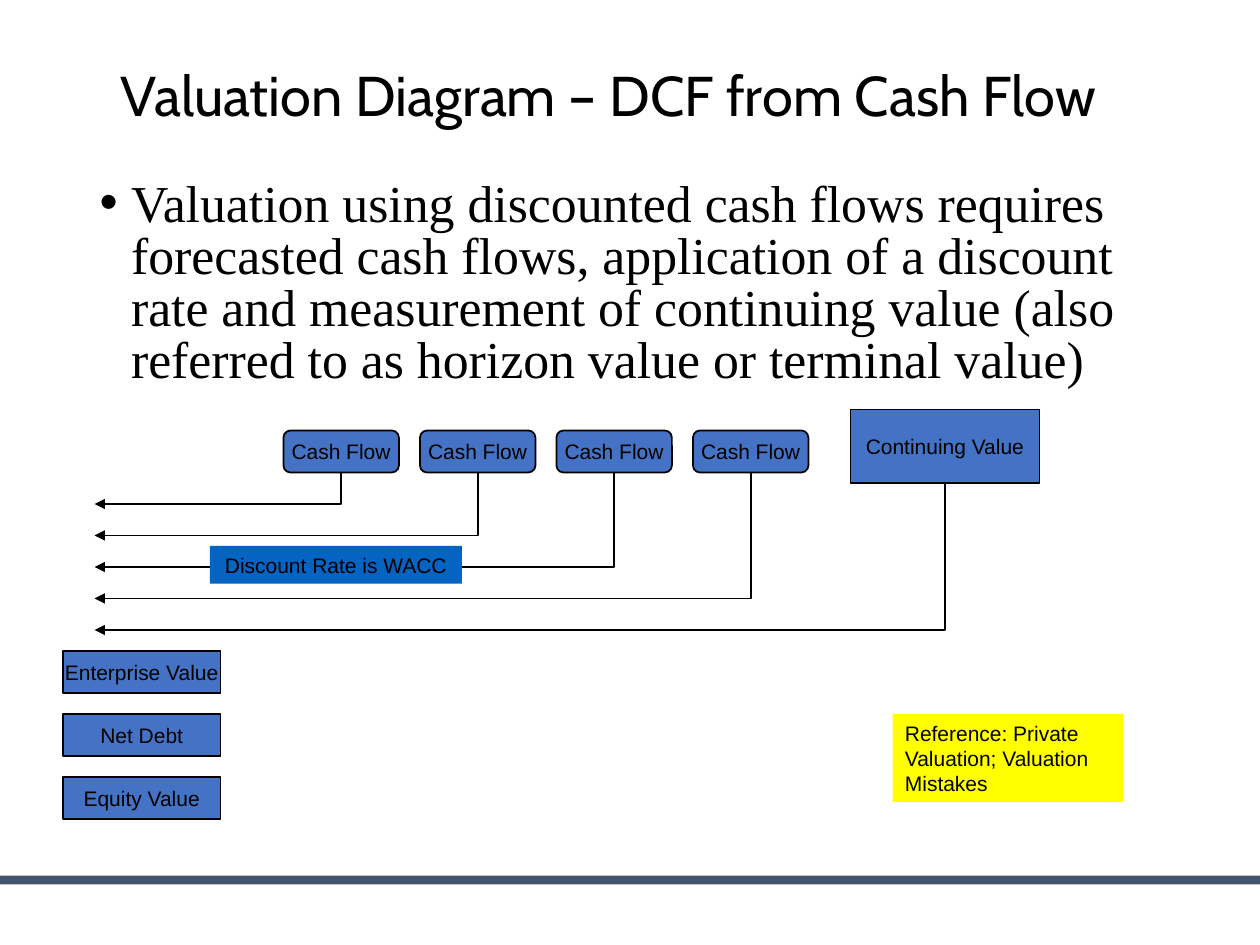
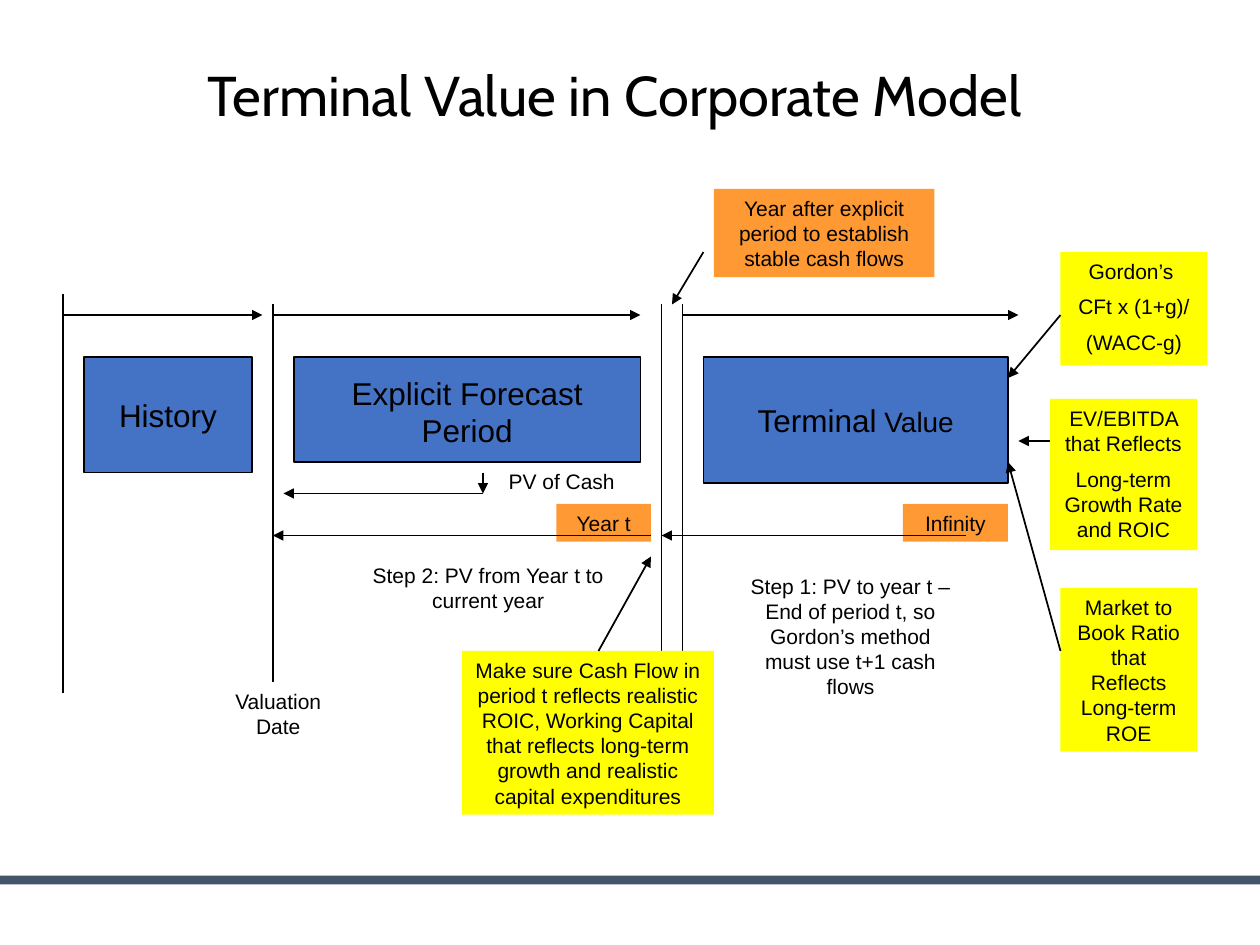
import lxml.etree
import pptx
import pptx.dml.color
import pptx.enum.shapes
import pptx.enum.text
import pptx.oxml
import pptx.oxml.ns
import pptx.util

SHAPE = pptx.enum.shapes.MSO_SHAPE
CONNECTOR = pptx.enum.shapes.MSO_CONNECTOR
ALIGN = pptx.enum.text.PP_ALIGN
ANCHOR = pptx.enum.text.MSO_ANCHOR

BLACK = "000000"
BLUE = "4472C4"
DEEP_BLUE = "0563C1"
SLATE = "44546A"
YELLOW = "FFFF00"
ORANGE = "FF9933"


def color(value):
    """Turn a hex string into a colour."""
    return pptx.dml.color.RGBColor.from_string(value)


def grid(n):
    """Convert grid steps, twelve to the inch, into a length."""
    return pptx.util.Cm(n * 2.54 / 12)


class Deck:
    """Hold the style and the current slide, and draw each kind of element."""

    body_font = "Arial"
    title_font = "Cabin"
    bullet_font = "Times New Roman"

    def __init__(self):
        """Start an empty presentation."""
        self.prs = pptx.Presentation()
        self.prs.slide_width = grid(120)
        self.prs.slide_height = grid(90)

    def new_slide(self, title):
        """Add a slide with the footer band and a title."""
        self.s = self.prs.slides.add_slide(self.prs.slide_layouts[6])
        self.box(0, 83.4, 120, 0.84, SLATE)
        sp = self.text(8.3, 4.8, 100.5, 9.1, title, 32, self.title_font)
        sp.text_frame.vertical_anchor = ANCHOR.MIDDLE
        sp.text_frame.paragraphs[0].line_spacing = 0.9

    def style_run(self, r, size, font=body_font):
        """Set the font of a run."""
        r.font.name = font
        r.font.size = pptx.util.Pt(size)
        r.font.color.rgb = color(BLACK)

    def set_text(self, sp, text, size, font=body_font, align=ALIGN.CENTER):
        """Fill a shape with text, one paragraph per line."""
        tf = sp.text_frame
        tf.word_wrap = True
        tf.vertical_anchor = ANCHOR.TOP
        tf.text = text
        for i, p in enumerate(tf.paragraphs):
            p.alignment = align
            if i:
                p.space_before = pptx.util.Pt(size / 2)
            for r in p.runs:
                self.style_run(r, size, font)

    def text(self, x, y, w, h, text, size=12, font=body_font, align=ALIGN.CENTER):
        """Add a plain text box."""
        sp = self.s.shapes.add_textbox(*map(grid, (x, y, w, h)))
        self.set_text(sp, text, size, font, align)
        return sp

    def box(self, x, y, w, h, fill, kind=SHAPE.RECTANGLE):
        """Add a filled shape without outline."""
        sp = self.s.shapes.add_shape(kind, *map(grid, (x, y, w, h)))
        sp.shadow.inherit = False
        sp.fill.solid()
        sp.fill.fore_color.rgb = color(fill)
        sp.line.fill.background()
        return sp

    def note(self, x, y, w, h, text, fill, align=ALIGN.CENTER):
        """Add a filled note with wrapped text."""
        self.set_text(self.box(x, y, w, h, fill), text, 12, align=align)

    def block(self, x, y, w, h, text="", size=12, kind=SHAPE.RECTANGLE):
        """Add an outlined blue block with a centred label."""
        sp = self.box(x, y, w, h, BLUE, kind)
        sp.line.color.rgb = color(BLACK)
        sp.line.width = pptx.util.Pt(1)
        if text:
            self.set_text(sp, text, size)
            sp.text_frame.word_wrap = False
            sp.text_frame.vertical_anchor = ANCHOR.MIDDLE
        return sp

    def line(self, x1, y1, x2, y2, arrow=True, kind=CONNECTOR.STRAIGHT):
        """Add a line, with an arrowhead at its end if wanted."""
        sp = self.s.shapes.add_connector(kind, *map(grid, (x1, y1, x2, y2)))
        sp.line.color.rgb = color(BLACK)
        sp.line.width = pptx.util.Pt(1)
        qn = pptx.oxml.ns.qn
        spPr = sp._element.spPr
        if arrow:
            lxml.etree.SubElement(spPr.find(qn("a:ln")), qn("a:tailEnd"), type="triangle")
        lxml.etree.SubElement(spPr, qn("a:effectLst"))
        return sp

    def down_left_arrow(self, x1, y1, x2, y2):
        """Add an arrow that runs down and then left."""
        cx, cy = (x1 + x2) / 2, (y1 + y2) / 2
        dx, dy = (x1 - x2) / 2, (y2 - y1) / 2
        sp = self.line(cx - dy, cy - dx, cx + dy, cy + dx, kind=CONNECTOR.ELBOW)
        spPr = sp._element.spPr
        spPr.find(pptx.oxml.ns.qn("a:xfrm")).set("rot", "5400000")
        spPr.find(pptx.oxml.ns.qn("a:prstGeom")).set("prst", "bentConnector2")

    def bullet(self, x, y, w, h, text, size):
        """Add a bulleted paragraph."""
        sp = self.text(x, y, w, h, text, size, self.bullet_font, ALIGN.LEFT)
        p = sp.text_frame.paragraphs[0]
        p.line_spacing = 0.84
        pPr = p._p.get_or_add_pPr()
        pPr.set("marL", str(grid(3)))
        pPr.set("indent", str(-grid(3)))
        qn = pptx.oxml.ns.qn
        lxml.etree.SubElement(pPr, qn("a:buFont"), typeface=self.body_font)
        lxml.etree.SubElement(pPr, qn("a:buChar"), char="•")


def valuation_diagram(deck):
    """Draw the discounted cash flow diagram."""
    deck.new_slide("Valuation Diagram – DCF from Cash Flow ")
    deck.bullet(
        8.3, 16.6, 102.1, 20.4,
        "Valuation using discounted cash flows requires forecasted cash flows, "
        "application of a discount rate and measurement of continuing value "
        "(also referred to as horizon value or terminal value)", 29.6)
    for i in range(4):
        x = 27 + 13 * i
        deck.block(x, 41, 11, 4, "Cash Flow", kind=SHAPE.ROUNDED_RECTANGLE)
        deck.down_left_arrow(x + 5.5, 45, 9, 48 + 3 * i)
    deck.block(81, 39, 18, 7, "Continuing Value")
    deck.down_left_arrow(90, 46, 9, 60)
    deck.note(20, 52, 24, 3.6, "Discount Rate is WACC", DEEP_BLUE)
    for i, label in enumerate(("Enterprise Value", "Net Debt", "Equity Value")):
        deck.block(6, 62 + 6 * i, 15, 4, label)
    deck.note(85, 68, 22, 8.4, "Reference: Private Valuation; Valuation Mistakes",
              YELLOW, ALIGN.LEFT)


def terminal_value(deck):
    """Draw the timeline that leads to terminal value."""
    deck.new_slide("Terminal Value in Corporate Model")

    for x, top, bottom in ((6, 28, 66), (26, 29, 65), (63, 29, 65), (65, 29, 62)):
        deck.line(x, top, x, bottom, arrow=False)
    for start, end in ((6, 25), (26, 61), (65, 97)):
        deck.line(start, 30, end, 30)

    deck.block(8, 34, 16, 11, "History", 18)
    deck.block(28, 34, 33, 10)
    deck.text(29, 35, 31, 8.4, "Explicit Forecast Period", 18)
    terminal = deck.block(67, 34, 29, 12, "Terminal", 18)
    r = terminal.text_frame.paragraphs[0].add_run()
    r.text = " Value"
    deck.style_run(r, 16)

    deck.note(53, 48, 9, 3.6, "Year t", ORANGE)
    deck.note(86, 48, 10, 3.6, "Infinity", ORANGE)
    for start, end in ((92, 63), (62, 26)):
        deck.line(start, 51, end, 51)
    deck.line(46, 45, 46, 47)
    deck.line(46, 47, 27, 47)

    for x, y, w, h, label in (
        (70, 54, 22, 13.2, "Step 1: PV to year t – End of period t, so "
                           "Gordon’s method must use t+1 cash flows"),
        (34, 53, 25, 6, "Step 2: PV from Year t to current year"),
        (47, 44, 13, 3.6, "PV of Cash"),
        (19, 65, 15, 6, "Valuation Date"),
    ):
        deck.text(x, y, w, h, label)

    for x, y, w, h, label, fill in (
        (101, 24, 14, 10.8, "Gordon’s \nCFt x (1+g)/\n(WACC-g)", YELLOW),
        (100, 38, 14, 14.4, "EV/EBITDA that Reflects\n"
                            "Long-term Growth Rate and ROIC", YELLOW),
        (101, 56, 13, 15.6, "Market to Book Ratio that Reflects Long-term ROE", YELLOW),
        (44, 62, 24, 15.6, "Make sure Cash Flow in period t reflects realistic ROIC, "
                           "Working Capital that reflects long-term growth and "
                           "realistic capital expenditures", YELLOW),
        (68, 18, 21, 8.4, "Year after explicit period to establish stable cash flows",
         ORANGE),
    ):
        deck.note(x, y, w, h, label, fill)

    for pointer in ((101, 30, 96, 36), (100, 42, 97, 42), (101, 62, 96, 44),
                    (57, 62, 62, 53), (67, 24, 64, 29)):
        deck.line(*pointer)


def main():
    """Build both slides and save them."""
    deck = Deck()
    valuation_diagram(deck)
    terminal_value(deck)
    deck.prs.save("out.pptx")


if __name__ == "__main__":
    main()
